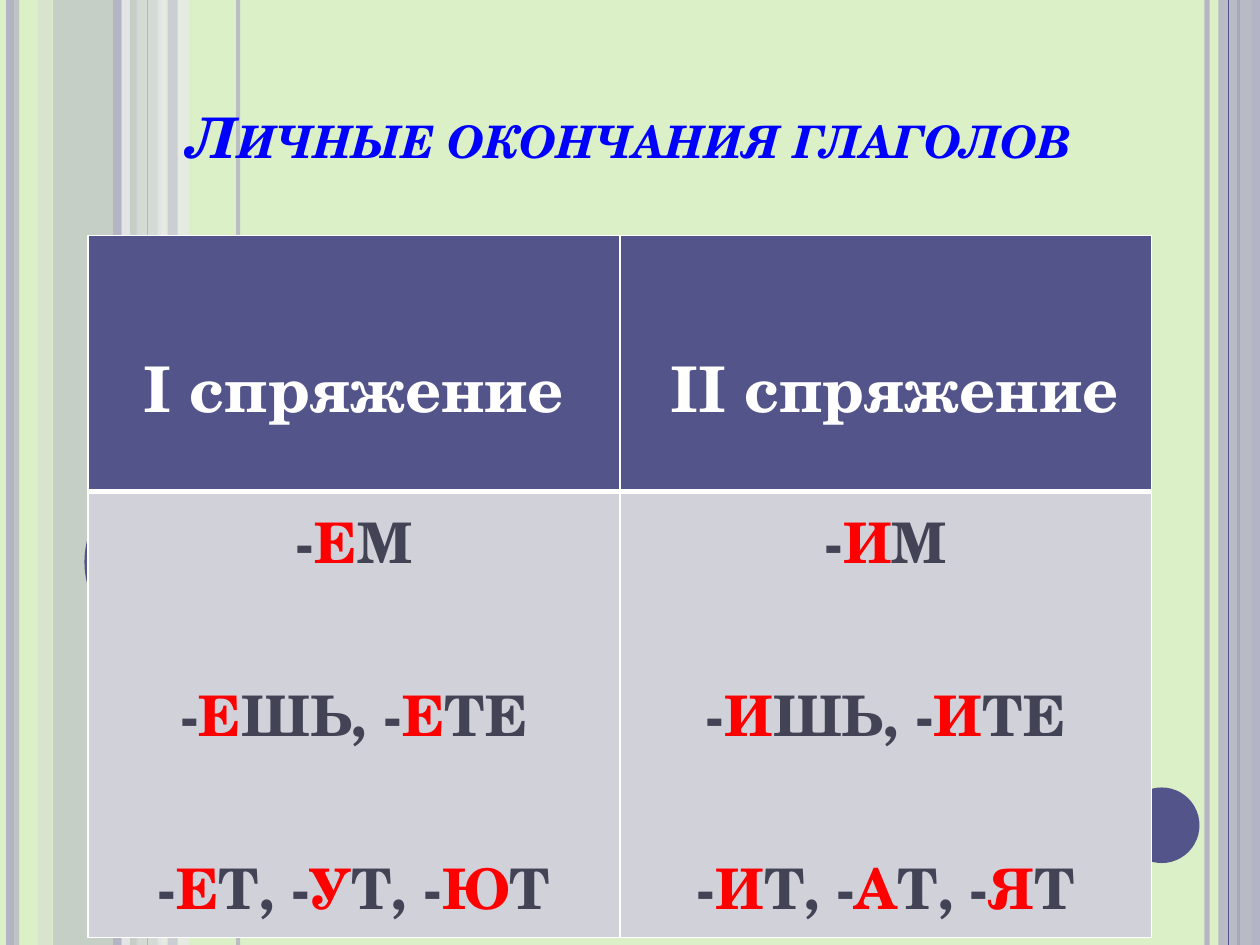
"""Build a slide with a table of personal verb endings by conjugation."""
from dataclasses import dataclass

from lxml.etree import SubElement
from pptx import Presentation
from pptx.dml.color import RGBColor
from pptx.enum.shapes import MSO_CONNECTOR, MSO_SHAPE
from pptx.enum.text import MSO_ANCHOR, MSO_AUTO_SIZE, PP_ALIGN
from pptx.oxml import parse_xml
from pptx.oxml.ns import nsdecls, qn
from pptx.util import Inches, Pt


@dataclass(frozen=True)
class Theme:
    font: str = "TeX Gyre Schola"
    back: str = "DCF0C7"
    indigo: str = "53548A"
    mist: str = "B3B4C4"
    pale: str = "D1D1DA"
    light: str = "E9E9ED"
    white: str = "FFFFFF"
    ink: str = "424456"
    red: str = "FF0000"
    blue: str = "0000FF"
    head_size: int = 36
    body_size: int = 32
    gap: float = 49.5


T = Theme()
WIDTH, HEIGHT = 10, 7.5

TITLE = "Личные окончания глаголов"
HEADERS = ["І спряжение", " ІІ спряжение"]
ENDINGS = [
    ["-*Е*М", "-*Е*ШЬ, -*Е*ТЕ", "-*Е*Т, -*У*Т, -*Ю*Т"],
    ["-*И*М", "-*И*ШЬ, -*И*ТЕ", "-*И*Т, -*А*Т, -*Я*Т"],
]
TITLE_BOX = (0.75, 0.62, 8.5, 0.78)
TABLE_LEFT, TABLE_TOP, COL_WIDTH = 0.7, 1.87, 4.22
ROW_HEIGHTS = (2.03, 3.54)
HEADER_INSET = 0.82

# kind, left, width (points for lines, inches for bands), colour, opacity
STRIPES = [
    ("line", 9.58, 3, T.mist, 93),
    ("line", 0.08, 4.5, T.mist, 100),
    ("line", 9.83, 1.5, T.indigo, 100),
    ("band", 9.67, 0.33, T.mist, 87),
    ("line", 9.75, 0.75, T.indigo, 100),
    ("band", 0.42, 0.67, T.mist, 54),
    ("band", 0.3, 0.11, T.pale, 36),
    ("band", 1.08, 0.2, T.pale, 70),
    ("band", 1.25, 0.25, T.light, 71),
    ("line", 0.12, 4.5, T.mist, 73),
    ("line", 1, 4.5, T.light, 83),
    ("line", 0.93, 4.5, T.mist, 100),
    ("line", 1.89, 2.25, T.mist, 82),
    ("line", 1.17, 0.75, T.mist, 100),
    ("line", 9.97, 4.5, T.mist, 100),
    ("band", 1.33, 0.08, T.mist, 51),
]
DOTS = [(8.92, 6.25, 0.6), (0.67, 3.75, 1.42), (1.43, 5.32, 0.7),
        (1.19, 6.02, 0.15), (1.82, 6.33, 0.3), (2.08, 4.92, 0.4)]


def paint(fill, color, opacity=100):
    fill.solid()
    fill.fore_color.rgb = RGBColor.from_string(color)
    if opacity < 100:
        clr = fill._xPr.find(qn("a:solidFill"))[0]
        SubElement(clr, qn("a:alpha")).set("val", str(opacity * 1000))


def add_filled(s, kind, box, color, opacity=100):
    sp = s.shapes.add_shape(kind, *map(Inches, box))
    sp.shadow.inherit = False
    sp.line.fill.background()
    paint(sp.fill, color, opacity)


def add_rule(s, x, points, color, opacity):
    cx = s.shapes.add_connector(MSO_CONNECTOR.STRAIGHT, Inches(x), 0,
                                Inches(x), Inches(HEIGHT))
    cx.line.width = Pt(points)
    paint(cx.line.fill, color, opacity)
    SubElement(cx._element.spPr, qn("a:effectLst"))


def add_run(p, text, size, color, italic=False):
    r = p.add_run()
    r.text = text
    r.font.name, r.font.size = T.font, Pt(size)
    r.font.bold, r.font.italic = True, italic
    r.font.color.rgb = RGBColor.from_string(color)
    return r


def style_cell(cell, color, top, bottom):
    paint(cell.fill, color)
    tcPr = cell._tc.get_or_add_tcPr()
    for i, (side, points) in enumerate(zip("LRTB", (1, 1, top, bottom))):
        tcPr.insert(i, parse_xml(
            f'<a:ln{side} {nsdecls("a")} w="{Pt(points)}"><a:solidFill>'
            f'<a:srgbClr val="{T.white}"/></a:solidFill></a:ln{side}>'))


def add_endings_table(s):
    tbl = s.shapes.add_table(
        2, len(HEADERS), Inches(TABLE_LEFT), Inches(TABLE_TOP),
        Inches(COL_WIDTH * len(HEADERS)), Inches(sum(ROW_HEIGHTS))).table
    for row, height in zip(tbl.rows, ROW_HEIGHTS):
        row.height = Inches(height)
    for c, (header, endings) in enumerate(zip(HEADERS, ENDINGS)):
        tbl.columns[c].width = Inches(COL_WIDTH)
        head, body = tbl.cell(0, c), tbl.cell(1, c)
        style_cell(head, T.indigo, 1, 3)
        style_cell(body, T.pale, 3, 1)
        head.margin_top = Inches(HEADER_INSET)
        p = head.text_frame.paragraphs[0]
        p.alignment = PP_ALIGN.CENTER
        add_run(p, header, T.head_size, T.white)
        tf = body.text_frame
        for i, ending in enumerate(endings):
            p = tf.add_paragraph() if i else tf.paragraphs[0]
            p.alignment = PP_ALIGN.CENTER
            p.space_before = Pt(T.gap if i else 0)
            for j, part in enumerate(ending.split("*")):
                add_run(p, part, T.body_size, T.red if j % 2 else T.ink)


def set_title(s):
    title = s.shapes.title
    title.left, title.top, title.width, title.height = map(Inches, TITLE_BOX)
    tf = title.text_frame
    tf.auto_size, tf.word_wrap = MSO_AUTO_SIZE.NONE, True
    tf.vertical_anchor = MSO_ANCHOR.BOTTOM
    p = tf.paragraphs[0]
    p.alignment = PP_ALIGN.CENTER
    r = add_run(p, TITLE, T.body_size, T.blue, italic=True)
    r.font._element.set("cap", "small")
    s.shapes._spTree.append(title._element)


def main():
    prs = Presentation()
    prs.slide_width, prs.slide_height = Inches(WIDTH), Inches(HEIGHT)
    s = prs.slides.add_slide(prs.slide_layouts[5])
    paint(s.background.fill, T.back)
    for kind, x, width, color, opacity in STRIPES:
        if kind == "line":
            add_rule(s, x, width, color, opacity)
        else:
            add_filled(s, MSO_SHAPE.RECTANGLE, (x, 0, width, HEIGHT), color, opacity)
    for x, y, size in DOTS:
        add_filled(s, MSO_SHAPE.OVAL, (x, y, size, size), T.indigo)
    set_title(s)
    add_endings_table(s)
    prs.save("out.pptx")


if __name__ == "__main__":
    main()
